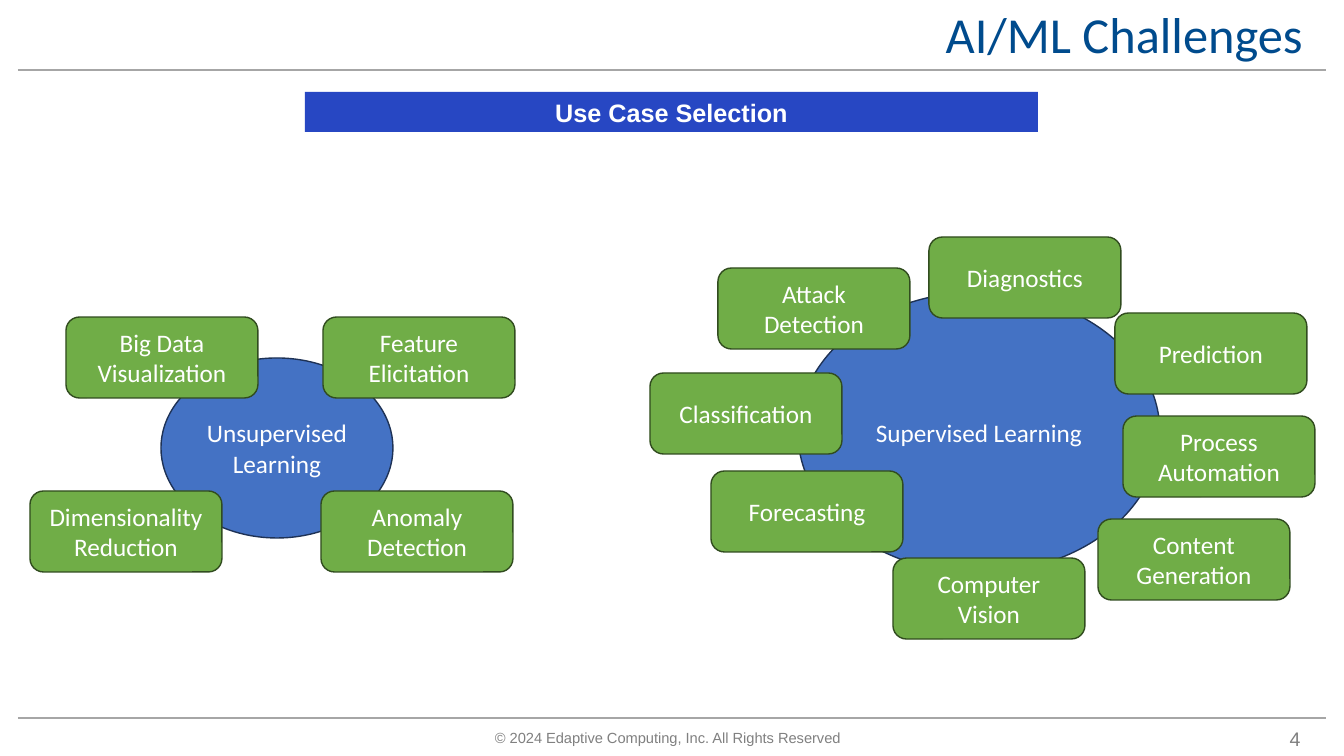
from pptx import Presentation
from pptx.dml.color import RGBColor
from pptx.enum.shapes import MSO_CONNECTOR, MSO_SHAPE
from pptx.enum.text import MSO_ANCHOR, PP_ALIGN
from pptx.oxml.ns import qn
from pptx.util import Pt
from lxml.etree import SubElement

# Content: lengths in px
TITLE = "AI/ML Challenges"
BANNER = "Use Case Selection"
FOOTER = "© 2024 Edaptive Computing, Inc. All Rights Reserved"
NUMBER = "4"
RULES = [70, 718]
CARD = (192, 81)
GROUPS = [
    ("Unsupervised Learning", (161, 358, 232, 180), [
        ("Big Data Visualization", 66, 317),
        ("Feature Elicitation", 323, 317),
        ("Dimensionality Reduction", 30, 491),
        ("Anomaly Detection", 321, 491),
    ]),
    ("Supervised Learning", (798, 292, 362, 281), [
        ("Attack Detection", 718, 268),
        ("Diagnostics", 929, 237),
        ("Classification", 650, 373),
        ("Forecasting", 711, 471),
        ("Prediction", 1115, 313),
        ("Process Automation", 1123, 416),
        ("Computer Vision", 893, 558),
        ("Content Generation", 1098, 519),
    ]),
]

NAVY = RGBColor(0x00, 0x4B, 0x8D)
ROYAL = RGBColor(0x27, 0x47, 0xC3)
BLUE = RGBColor(0x44, 0x72, 0xC4)
DARK_BLUE = RGBColor(0x1E, 0x32, 0x56)
GREEN = RGBColor(0x70, 0xAD, 0x47)
DARK_GREEN = RGBColor(0x31, 0x4C, 0x1F)
GREY = RGBColor(0x80, 0x80, 0x80)
SILVER = RGBColor(0xA6, 0xA6, 0xA6)
WHITE = RGBColor(0xFF, 0xFF, 0xFF)

SCALE = 914400 / 100.8


def px(*sizes):
    return [round(size * SCALE) for size in sizes]


def write(shape, text, size, color, font="Calibri", align=PP_ALIGN.CENTER,
          anchor=MSO_ANCHOR.MIDDLE, bold=False, wrap=True):
    frame = shape.text_frame
    frame.word_wrap = wrap
    frame.vertical_anchor = anchor
    para = frame.paragraphs[0]
    para.alignment = align
    run = para.add_run()
    run.text = text
    run.font.size = Pt(size)
    run.font.name = font
    run.font.bold = bold
    run.font.color.rgb = color
    return para


def block(kind, box, fill, line=None):
    shape = slide.shapes.add_shape(kind, *px(*box))
    shape.shadow.inherit = False
    shape.fill.solid()
    shape.fill.fore_color.rgb = fill
    if line is None:
        shape.line.fill.background()
    else:
        shape.line.color.rgb = line
        shape.line.width = Pt(1)
    return shape


deck = Presentation()
deck.slide_width, deck.slide_height = px(1344, 756)
slide = deck.slides.add_slide(deck.slide_layouts[5])

# Title
title = slide.shapes.title
title.left, title.top, title.width, title.height = px(478, 7, 835, 61)
write(title, TITLE, 36, NAVY, align=PP_ALIGN.RIGHT).line_spacing = 0.9

# Rules
for y in RULES:
    rule = slide.shapes.add_connector(MSO_CONNECTOR.STRAIGHT,
                                      *px(18, y, 1326, y))
    rule.line.color.rgb = SILVER
    rule.line.width = Pt(1.5)
    SubElement(rule._element.spPr, qn("a:effectLst"))

# Footer and slide number
foot = slide.shapes.add_textbox(*px(485, 724, 374, 28))
write(foot, FOOTER, 10.5, GREY, "Arial", PP_ALIGN.LEFT, MSO_ANCHOR.TOP,
      wrap=False)
number = slide.shapes.add_textbox(*px(1265, 722, 60, 34))
write(number, NUMBER, 14, GREY, "Arial", anchor=MSO_ANCHOR.TOP)

# Banner
banner = block(MSO_SHAPE.RECTANGLE, (305, 92, 733, 40), ROYAL)
write(banner, BANNER, 18, WHITE, "Arial", bold=True)

# Learning types with their use cases
for name, box, cases in GROUPS:
    hub = block(MSO_SHAPE.OVAL, box, BLUE, DARK_BLUE)
    write(hub, name, 18, WHITE)
    for case, x, y in cases:
        card = block(MSO_SHAPE.ROUNDED_RECTANGLE, (x, y, *CARD),
                     GREEN, DARK_GREEN)
        write(card, case, 18, WHITE)

deck.save("out.pptx")
